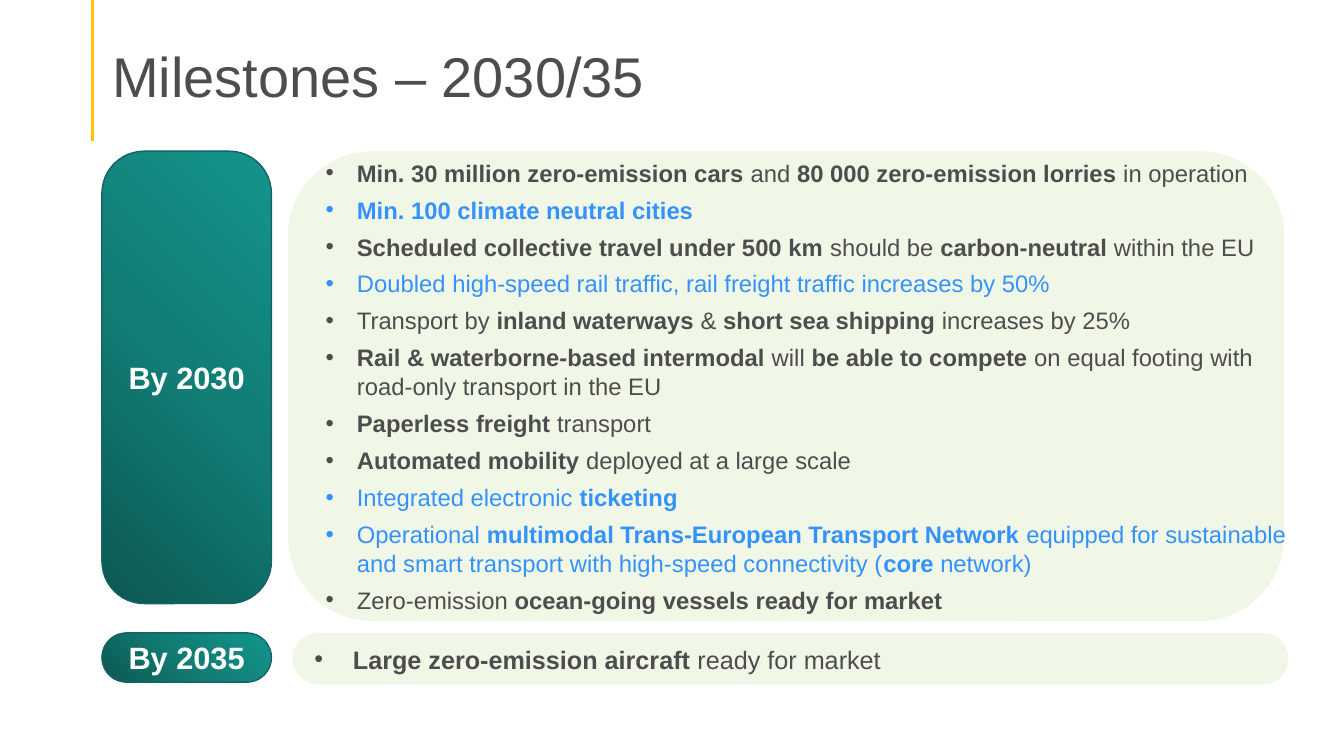
from copy import deepcopy

from lxml import etree
from pptx import Presentation
from pptx.dml import color
from pptx.enum import shapes, text
from pptx.oxml import ns
from pptx.util import Cm, Pt

GREY, BLUE, WHITE = "4D4D4D", "3492FB", "FFFFFF"
PANEL, LABEL_EDGE, ACCENT = "F0F7E7", "166267", "FFC000"
LABEL_STOPS = [(0, "0C5852"), (0.5, "117D75"), (1, "14948B")]

HEADING = "Milestones – 2030/35"
GOALS_2030 = [
    ("**Min. 30 million zero-emission cars **and **80 000 zero-emission lorries **in operation", GREY),
    ("**Min. 100 climate neutral cities**", BLUE),
    ("**Scheduled collective travel under 500 km **should be **carbon-neutral** within the EU", GREY),
    ("Doubled high-speed rail traffic, rail freight traffic increases by 50%", BLUE),
    ("Transport by **inland waterways **& **short sea shipping **increases by 25%", GREY),
    ("**Rail & waterborne-based intermodal** will **be able to compete **"
     "on equal footing with road-only transport in the EU", GREY),
    ("**Paperless freight **transport", GREY),
    ("**Automated mobility **deployed at a large scale", GREY),
    ("Integrated electronic **ticketing**", BLUE),
    ("Operational **multimodal Trans-European Transport Network **equipped for sustainable "
     "and smart transport with high-speed connectivity (**core** network)", BLUE),
    ("Zero-emission** ocean-going vessels ready for market**", GREY),
]
GOALS_2035 = [("**Large zero-emission aircraft **ready for market", GREY)]

LABEL_LEFT, LABEL_WIDTH, PANEL_WIDTH = 2.57, 4.27, 25.1
MILESTONES = [
    dict(label="By 2030", goals=GOALS_2030, top=3.81, label_height=11.4, label_round=0.249,
         panel_left=7.26, panel_height=11.84, panel_round=0.179,
         list_box=(7.95, 3.86, 25.43, 11.84), size=17, indent=0.79, gap=6),
    dict(label="By 2035", goals=GOALS_2035, top=15.95, label_height=1.24, label_round=0.5,
         panel_left=7.37, panel_height=1.3, panel_round=0.5,
         list_box=(7.67, 16.1, 24.46, 1.02), size=18, indent=0.97, gap=0),
]


def rgb(value):
    return color.RGBColor.from_string(value)


def set_font(paragraph, size, colour, bold=None):
    font = paragraph.font
    font.name, font.size, font.bold = "Arial", Pt(size), bold
    font.color.rgb = rgb(colour)


def place(part, left, top, width, height):
    part.left, part.top, part.width, part.height = Cm(left), Cm(top), Cm(width), Cm(height)


def add_rounded(left, top, width, height, rounding):
    rounded = slide.shapes.add_shape(shapes.MSO_SHAPE.ROUNDED_RECTANGLE,
                                     Cm(left), Cm(top), Cm(width), Cm(height))
    rounded.adjustments[0] = rounding
    rounded.shadow.inherit = False
    return rounded


def add_label(milestone):
    label = add_rounded(LABEL_LEFT, milestone["top"], LABEL_WIDTH,
                        milestone["label_height"], milestone["label_round"])
    label.fill.gradient()
    label.fill.gradient_angle = 45
    first_stop = next(label.element.iter(ns.qn("a:gs")))
    first_stop.addnext(deepcopy(first_stop))
    for stop, (position, colour) in zip(label.fill.gradient_stops, LABEL_STOPS):
        stop.position = position
        stop.color.rgb = rgb(colour)
    label.line.color.rgb = rgb(LABEL_EDGE)
    label.line.width = Pt(1)
    frame = label.text_frame
    frame.text = milestone["label"]
    frame.vertical_anchor = text.MSO_ANCHOR.MIDDLE
    frame.paragraphs[0].alignment = text.PP_ALIGN.CENTER
    set_font(frame.paragraphs[0], 22, WHITE, True)


def add_panel(milestone):
    panel = add_rounded(milestone["panel_left"], milestone["top"], PANEL_WIDTH,
                        milestone["panel_height"], milestone["panel_round"])
    panel.fill.solid()
    panel.fill.fore_color.rgb = rgb(PANEL)
    panel.line.fill.background()


def fill_goals(body, milestone):
    place(body, *milestone["list_box"])
    slide.shapes.element.append(body.element)
    frame = body.text_frame
    frame.word_wrap = True
    frame.auto_size = text.MSO_AUTO_SIZE.NONE
    indent = Cm(milestone["indent"])
    for index, (goal, colour) in enumerate(milestone["goals"]):
        paragraph = frame.add_paragraph() if index else frame.paragraphs[0]
        properties = paragraph._p.get_or_add_pPr()
        properties.set("marL", str(indent))
        properties.set("indent", str(-indent))
        etree.SubElement(properties, ns.qn("a:buChar"), char="•")
        paragraph.space_before, paragraph.space_after = Pt(0), Pt(milestone["gap"])
        set_font(paragraph, milestone["size"], colour)
        for part, wording in enumerate(goal.split("**")):
            if wording:
                run = paragraph.add_run()
                run.text = wording
                run.font.bold = part % 2 == 1


deck = Presentation()
deck.slide_width, deck.slide_height = Cm(33.87), Cm(19.05)
slide = deck.slides.add_slide(deck.slide_layouts[3])
heading, *bodies = slide.placeholders

accent = slide.shapes.add_connector(shapes.MSO_CONNECTOR.STRAIGHT,
                                    Cm(2.34), Cm(0), Cm(2.34), Cm(3.56))
accent.line.color.rgb = rgb(ACCENT)
accent.line.width = Pt(2.25)
etree.SubElement(accent.element.spPr, ns.qn("a:effectLst"))

place(heading, 2.57, 0.84, 29.21, 2.18)
title_frame = heading.text_frame
title_frame.text = HEADING
title_frame.vertical_anchor = text.MSO_ANCHOR.MIDDLE
title_frame.auto_size = text.MSO_AUTO_SIZE.NONE
title_frame.margin_bottom = 0
title_frame.paragraphs[0].alignment = text.PP_ALIGN.LEFT
title_frame.paragraphs[0].line_spacing = 0.9
set_font(title_frame.paragraphs[0], 40, GREY)

for body, milestone in zip(bodies, MILESTONES):
    add_panel(milestone)
    add_label(milestone)
    fill_goals(body, milestone)

deck.save("out.pptx")
